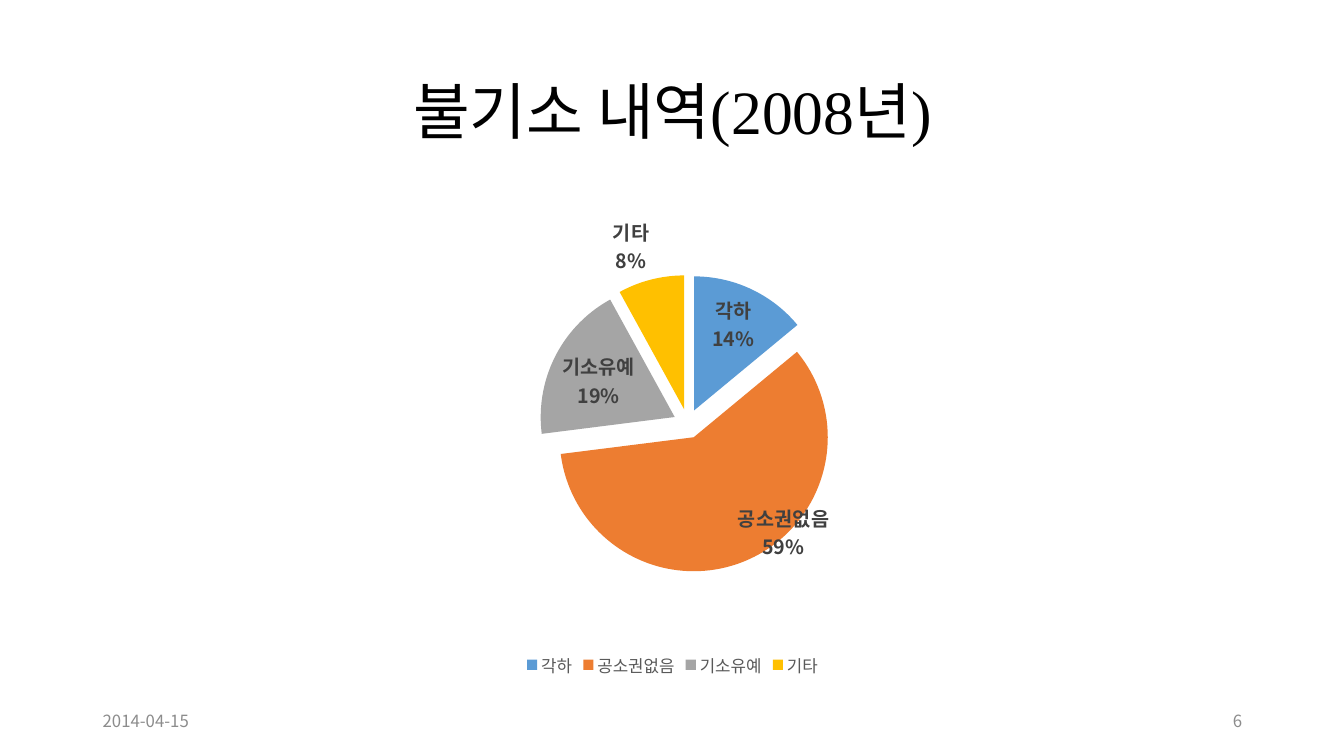
"""Build a slide with an exploded pie chart of non-indictment reasons in 2008."""
from lxml import etree
from pptx import Presentation, util as u
from pptx.chart.data import CategoryChartData
from pptx.dml.color import RGBColor
from pptx.enum import chart as c, text as t
from pptx.oxml.ns import qn

SANS = "Noto Sans CJK KR"
SLICES = {"각하": (14, "5B9BD5"), "공소권없음": (59, "ED7D31"),
          "기소유예": (19, "A5A5A5"), "기타": (8, "FFC000")}


def style(font, color, **values):
    for name, value in values.items():
        setattr(font, name, value)
    font.color.rgb = RGBColor.from_string(color)


def write(box, words, align, font_values, color):
    frame = box.text_frame
    for name, value in {"word_wrap": True, "auto_size": t.MSO_AUTO_SIZE.NONE,
                        "vertical_anchor": t.MSO_ANCHOR.MIDDLE}.items():
        setattr(frame, name, value)
    para = frame.paragraphs[0]
    para.alignment = align
    span = para.add_run()
    span.text = words
    style(span.font, color, **font_values)
    return para


deck = Presentation()
deck.slide_width, deck.slide_height = u.Inches(13.33), u.Inches(7.5)
page = deck.slides.add_slide(deck.slide_layouts[5])
margin, content_width = u.Inches(0.92), u.Inches(11.5)

title = page.shapes.title
for name, value in {"left": margin, "top": u.Inches(0.56),
                    "width": content_width, "height": u.Inches(1.15)}.items():
    setattr(title, name, value)
heading = write(title, "불기소 내역(2008년)", t.PP_ALIGN.CENTER,
                {"name": "Times New Roman", "size": u.Pt(44)}, "000000")
heading.line_spacing = 0.9

footer_width = u.Inches(3)
for words, left, align in (
        ("2014-04-15", margin, t.PP_ALIGN.LEFT),
        ("6", margin + content_width - footer_width, t.PP_ALIGN.RIGHT)):
    box = page.shapes.add_textbox(left, u.Inches(6.95), footer_width, u.Inches(0.4))
    write(box, words, align, {"name": SANS, "size": u.Pt(12)}, "8C8C8C")

data = CategoryChartData(number_format="#,##0")
data.categories = list(SLICES)
data.add_series("Series 1", [value for value, _ in SLICES.values()])
chart = page.shapes.add_chart(c.XL_CHART_TYPE.PIE, margin, u.Inches(2),
                              content_width, u.Inches(4.76), data).chart
chart.has_title = False
chart.has_legend = True
chart.legend.position = c.XL_LEGEND_POSITION.BOTTOM
chart.legend.include_in_layout = False
style(chart.font, "000000", name=SANS, size=u.Pt(10))
style(chart.legend.font, "595959", name=SANS, size=u.Pt(12))

plot = chart.plots[0]
plot.vary_by_categories = True
series = plot.series[0]
for index, (_, color) in enumerate(SLICES.values()):
    fill = series.points[index].format.fill
    fill.solid()
    fill.fore_color.rgb = RGBColor.from_string(color)
explosion = etree.Element(qn("c:explosion"), val="11")
series._element.find(qn("c:dPt")).addprevious(explosion)

labels = series.data_labels
for name, value in {"show_percentage": True, "show_category_name": True,
                    "show_value": False, "number_format": "0%",
                    "number_format_is_linked": False,
                    "position": c.XL_LABEL_POSITION.BEST_FIT}.items():
    setattr(labels, name, value)
style(labels.font, "404040", name=SANS, size=u.Pt(14), bold=True)
separator = etree.Element(qn("c:separator"))
separator.text = "\n"
labels._element.find(qn("c:showBubbleSize")).addnext(separator)

moved = etree.Element(qn("c:dLbl"))
etree.SubElement(moved, qn("c:idx"), val="1")
layout = etree.SubElement(etree.SubElement(moved, qn("c:layout")), qn("c:manualLayout"))
for axis, shift in (("x", -0.01), ("y", -0.13)):
    etree.SubElement(layout, qn("c:" + axis), val=str(shift))
for tag, value in (("dLblPos", "bestFit"), ("showLegendKey", "0"), ("showVal", "0"),
                   ("showCatName", "1"), ("showSerName", "0"), ("showPercent", "1"),
                   ("showBubbleSize", "0")):
    etree.SubElement(moved, qn("c:" + tag), val=value)
etree.SubElement(moved, qn("c:separator")).text = "\n"
labels._element.insert(0, moved)

deck.save("out.pptx")
